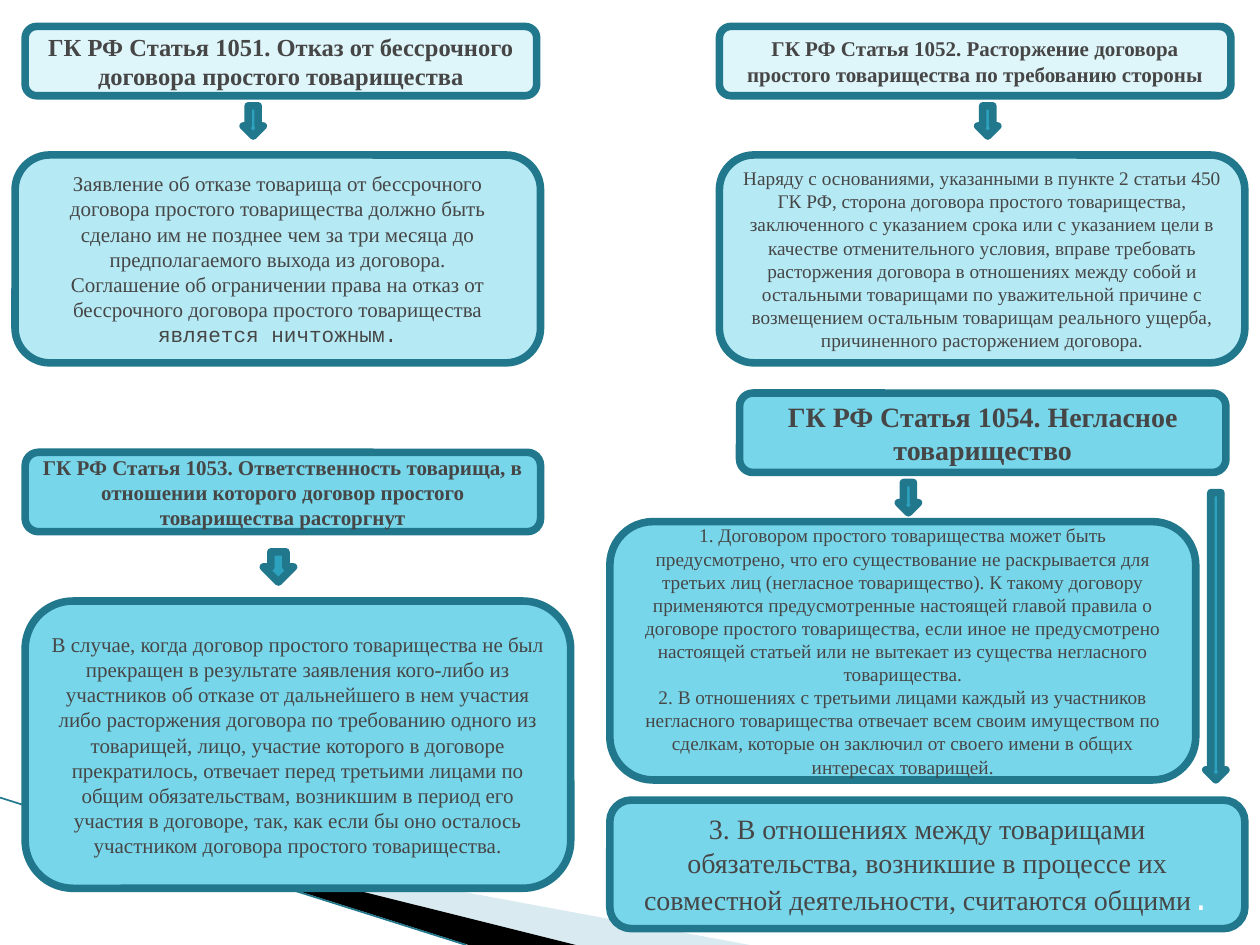
from lxml import etree
from pptx import Presentation, util as u
from pptx.dml.color import RGBColor
from pptx.enum import shapes, text as t
from pptx.oxml import ns

COLORS = {
    "border": "21788D", "arrow": "2DA2BF", "text": "464646", "white": "FFFFFF",
    "pale": "DEF5FA", "light": "B5E9F4", "medium": "78D6EA",
    "wave": "A0CBDC", "black": "000000",
}
SERIF, MONO = "Times New Roman", "Courier New"


def paint(shape, fill, border=None):
    """Set a solid fill and an optional border, without shadow."""
    shape.shadow.inherit = False
    shape.fill.solid()
    shape.fill.fore_color.rgb = RGBColor.from_string(COLORS[fill])
    if border:
        shape.line.color.rgb = RGBColor.from_string(COLORS[border])
        shape.line.width = u.Pt(4.33)
    else:
        shape.line.fill.background()


def write(shape, text, size=12, bold=False, ending="", ending_size=None, ending_color="text"):
    """Write centred paragraphs; the ending is a monospaced run after the last one."""
    frame = shape.text_frame
    frame.word_wrap = True
    frame.vertical_anchor = t.MSO_ANCHOR.MIDDLE
    for index, line in enumerate(text.split("\n")):
        paragraph = frame.add_paragraph() if index else frame.paragraphs[0]
        paragraph.alignment = t.PP_ALIGN.CENTER
        run = paragraph.add_run()
        run.text = line
        run.font.name = SERIF
        run.font.size = u.Pt(size)
        run.font.bold = bold
        run.font.color.rgb = RGBColor.from_string(COLORS["text"])
    if ending:
        run = paragraph.add_run()
        run.text = ending
        run.font.name = MONO
        run.font.size = u.Pt(ending_size or size)
        run.font.color.rgb = RGBColor.from_string(COLORS[ending_color])


presentation = Presentation()
presentation.slide_width = u.Inches(10)
presentation.slide_height = u.Inches(7.5)
slide = presentation.slides.add_slide(presentation.slide_layouts[6])

# Decoration in the bottom left corner
waves = [
    ("wave", [(0.55, 6.5), (5.95, 7.5), (4.56, 7.5)]),
    ("black", [(0.53, 6.49), (4.57, 7.5), (3.72, 7.5)]),
]
for color, points in waves:
    corners = [(u.Inches(x), u.Inches(y)) for x, y in points]
    builder = slide.shapes.build_freeform(*corners[0])
    builder.add_line_segments(corners[1:], close=True)
    wave = builder.convert_to_shape()
    paint(wave, color)
    if color == "wave":
        fill_color = wave._element.spPr.find(ns.qn("a:solidFill"))[0]
        etree.SubElement(fill_color, ns.qn("a:alpha"), val="40000")

edge = slide.shapes.add_connector(
    shapes.MSO_CONNECTOR.STRAIGHT, u.Inches(0), u.Inches(6.33), u.Inches(3.7), u.Inches(7.5))
edge.line.color.rgb = RGBColor.from_string(COLORS["border"])
edge.line.width = u.Pt(0.95)
etree.SubElement(edge._element.spPr, ns.qn("a:effectLst"))

# Articles: left, top, width, height, fill, text, format
boxes = [
    (0.2, 0.21, 4.06, 0.55, "pale",
     "ГК РФ Статья 1051. Отказ от бессрочного договора простого товарищества",
     dict(size=14, bold=True)),
    (5.71, 0.21, 4.06, 0.55, "pale",
     "ГК РФ Статья 1052. Расторжение договора простого товарищества по требованию стороны",
     dict(bold=True)),
    (0.12, 1.23, 4.17, 1.65, "light",
     "Заявление об отказе товарища от бессрочного договора простого товарищества должно быть "
     "сделано им не позднее чем за три месяца до предполагаемого выхода из договора.\n"
     "Соглашение об ограничении права на отказ от бессрочного договора простого товарищества ",
     dict(ending="является ничтожным.")),
    (5.71, 1.23, 4.17, 1.65, "light",
     "Наряду с основаниями, указанными в пункте 2 статьи 450 ГК РФ, сторона договора простого "
     "товарищества, заключенного с указанием срока или с указанием цели в качестве "
     "отменительного условия, вправе требовать расторжения договора в отношениях между собой "
     "и остальными товарищами по уважительной причине с возмещением остальным товарищам "
     "реального ущерба, причиненного расторжением договора.",
     dict(size=11)),
    (0.2, 3.59, 4.09, 0.63, "medium",
     "ГК РФ Статья 1053. Ответственность товарища, в отношении которого договор простого "
     "товарищества расторгнут",
     dict(bold=True)),
    (0.2, 4.77, 4.33, 2.28, "medium",
     "В случае, когда договор простого товарищества не был прекращен в результате заявления "
     "кого-либо из участников об отказе от дальнейшего в нем участия либо расторжения договора "
     "по требованию одного из товарищей, лицо, участие которого в договоре прекратилось, "
     "отвечает перед третьими лицами по общим обязательствам, возникшим в период его участия "
     "в договоре, так, как если бы оно осталось участником договора простого товарищества.",
     dict()),
    (5.87, 3.12, 3.86, 0.63, "medium",
     "ГК РФ Статья 1054. Негласное товарищество",
     dict(size=16, bold=True)),
    (4.84, 4.14, 4.65, 2.05, "medium",
     "1. Договором простого товарищества может быть предусмотрено, что его существование не "
     "раскрывается для третьих лиц (негласное товарищество). К такому договору применяются "
     "предусмотренные настоящей главой правила о договоре простого товарищества, если иное не "
     "предусмотрено настоящей статьей или не вытекает из существа негласного товарищества.\n"
     "2. В отношениях с третьими лицами каждый из участников негласного товарищества отвечает "
     "всем своим имуществом по сделкам, которые он заключил от своего имени в общих интересах "
     "товарищей.",
     dict(size=11)),
    (4.84, 6.35, 5.04, 1.02, "medium",
     "3. В отношениях между товарищами обязательства, возникшие в процессе их совместной "
     "деятельности, считаются общими",
     dict(size=16, ending=".", ending_size=18, ending_color="white")),
]
for left, top, width, height, fill, text, text_format in boxes:
    box = slide.shapes.add_shape(
        shapes.MSO_SHAPE.ROUNDED_RECTANGLE, *map(u.Inches, (left, top, width, height)))
    paint(box, fill, "border")
    write(box, text, **text_format)

# Arrows from each article to its content: left, top, width, height
arrows = [
    (1.93, 0.84, 0.16, 0.24),
    (7.76, 0.84, 0.16, 0.24),
    (2.09, 4.38, 0.24, 0.24),
    (7.13, 3.83, 0.16, 0.24),
    (9.57, 3.91, 0.16, 2.28),
]
for position in arrows:
    arrow = slide.shapes.add_shape(shapes.MSO_SHAPE.DOWN_ARROW, *map(u.Inches, position))
    paint(arrow, "arrow", "border")

presentation.save("out.pptx")
